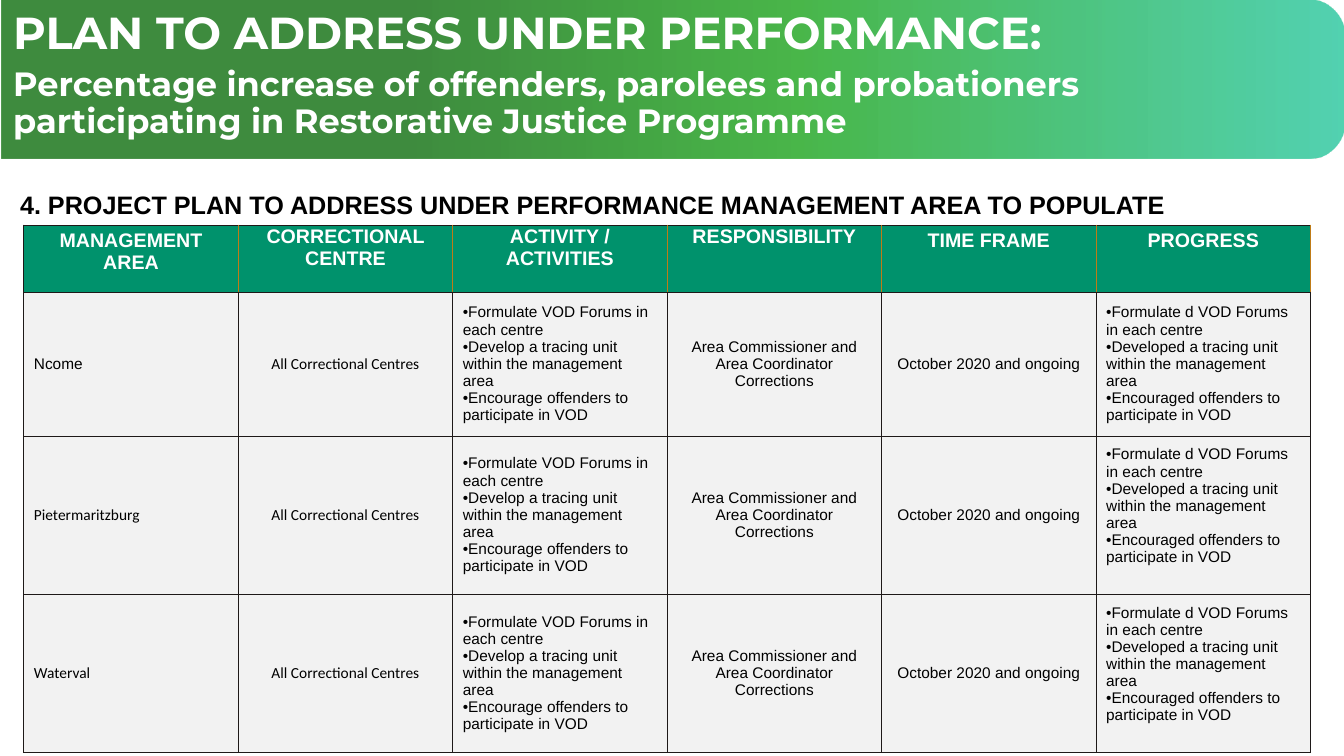
from lxml.etree import SubElement
from pptx import Presentation
from pptx.dml.color import RGBColor
from pptx.enum.shapes import MSO_SHAPE
from pptx.enum.text import MSO_ANCHOR, PP_ALIGN
from pptx.oxml.ns import qn
from pptx.util import Pt

WHITE = RGBColor(0xFF, 0xFF, 0xFF)
BLACK = RGBColor(0x00, 0x00, 0x00)
HEADER_GREEN = RGBColor(0x00, 0x92, 0x6C)
ROW_GREY = RGBColor(0xF2, 0xF2, 0xF2)
DARK_LINE = RGBColor(0x1E, 0x19, 0x18)
ORANGE_LINE = RGBColor(0xBF, 0x7B, 0x17)
DEEP_GREEN = RGBColor(0x00, 0x66, 0x00)
MID_GREEN = RGBColor(0x00, 0x99, 0x00)
TEAL = RGBColor(0x00, 0xBC, 0x8D)

BANNER_STOPS = [(30, DEEP_GREEN, 75), (59, MID_GREEN, 71), (100, TEAL, 67)]
TITLE_LINES = [
    ("PLAN TO ADDRESS UNDER PERFORMANCE:", 32),
    ("Percentage increase of offenders, parolees and probationers "
     "participating in Restorative Justice Programme", 24),
]
HEADING = "4. PROJECT PLAN TO ADDRESS UNDER PERFORMANCE MANAGEMENT AREA TO POPULATE"
HEADERS = ["MANAGEMENT AREA", "CORRECTIONAL CENTRE", "ACTIVITY / ACTIVITIES",
           "RESPONSIBILITY", "TIME FRAME", "PROGRESS"]
ACTIVITIES = ["Formulate VOD Forums in each centre",
              "Develop a tracing unit within the management area",
              "Encourage offenders to participate in VOD"]
PROGRESS = ["Formulate d VOD Forums in each centre",
            "Developed a tracing unit within the management area",
            "Encouraged offenders to participate in VOD"]
CENTRES = "All Correctional Centres"
RESPONSIBLE = "Area Commissioner and Area Coordinator Corrections"
TIME_FRAME = "October 2020 and ongoing"
AREAS = [("Ncome", "Arial", 102.8, 3.6),
         ("Pietermaritzburg", "Calibri", 113, 16.5),
         ("Waterval", "Calibri", 113, 16.5)]
COLUMN_WIDTH = 153.2
HEADER_HEIGHT = 47.9


class PlanSlide:
    """Holds the style and the current slide, and adds each kind of element."""

    title_font = "Montserrat"
    body_font = "Arial"
    header_size = 14
    cell_size = 11
    heading_size = 18

    def __init__(self, presentation):
        self.slide = presentation.slides.add_slide(presentation.slide_layouts[5])

    def add_run(self, paragraph, text, size, color, font=body_font, bold=False):
        run = paragraph.add_run()
        run.text = text
        run.font.name = font
        run.font.size = Pt(size)
        run.font.bold = bold
        run.font.color.rgb = color

    def set_title(self, lines, left, top, width, height):
        title = self.slide.shapes.title
        title.left, title.top = Pt(left), Pt(top)
        title.width, title.height = Pt(width), Pt(height)
        frame = title.text_frame
        frame.word_wrap = True
        frame.vertical_anchor = MSO_ANCHOR.TOP
        for index, (text, size) in enumerate(lines):
            paragraph = frame.add_paragraph() if index else frame.paragraphs[0]
            paragraph.alignment = PP_ALIGN.LEFT
            paragraph.line_spacing = 0.9
            paragraph.space_before = Pt(0)
            paragraph.space_after = Pt(6)
            self.add_run(paragraph, text, size, WHITE, self.title_font, True)

    def add_banner(self, stops, left, top, width, height):
        banner = self.slide.shapes.add_shape(
            MSO_SHAPE.ROUND_2_SAME_RECTANGLE,
            Pt(left + (width - height) / 2), Pt(top + (height - width) / 2),
            Pt(height), Pt(width))
        banner.rotation = 90
        banner.adjustments[0] = 0.23
        banner.adjustments[1] = 0
        banner.shadow.inherit = False
        banner.line.fill.background()
        banner.fill.gradient()
        banner.fill.gradient_angle = 90
        stop_list = banner.element.spPr.find(qn("a:gradFill")).find(qn("a:gsLst"))
        for stop in list(stop_list):
            stop_list.remove(stop)
        for position, color, opacity in stops:
            stop = SubElement(stop_list, qn("a:gs"), pos=str(position * 1000))
            fill = SubElement(stop, qn("a:srgbClr"), val=str(color))
            SubElement(fill, qn("a:alpha"), val=str(opacity * 1000))
        self.slide.shapes.title.element.addprevious(banner.element)

    def add_heading(self, text, left, top, width, height):
        box = self.slide.shapes.add_textbox(Pt(left), Pt(top), Pt(width), Pt(height))
        frame = box.text_frame
        frame.word_wrap = True
        frame.margin_left = 0
        self.add_run(frame.paragraphs[0], text, self.heading_size, BLACK, bold=True)

    def add_table(self, left, top, column_width, columns, heights):
        table = self.slide.shapes.add_table(
            len(heights), columns, Pt(left), Pt(top),
            Pt(column_width * columns), Pt(sum(heights))).table
        table.horz_banding = False
        for column in table.columns:
            column.width = Pt(column_width)
        for row, height in zip(table.rows, heights):
            row.height = Pt(height)
        return table

    def set_borders(self, cell, left, right):
        properties = cell._tc.get_or_add_tcPr()
        sides = [("a:lnL", left), ("a:lnR", right), ("a:lnT", DARK_LINE), ("a:lnB", DARK_LINE)]
        for index, (tag, color) in enumerate(sides):
            line = SubElement(properties, qn(tag), w=str(Pt(0.5)))
            fill = SubElement(line, qn("a:solidFill"))
            SubElement(fill, qn("a:srgbClr"), val=str(color))
            properties.insert(index, line)

    def fill_header(self, cell, text, tight, left, right):
        cell.fill.solid()
        cell.fill.fore_color.rgb = HEADER_GREEN
        cell.vertical_anchor = MSO_ANCHOR.TOP
        if tight:
            cell.margin_left = cell.margin_right = cell.margin_top = Pt(0.7)
            cell.margin_bottom = 0
        paragraph = cell.text_frame.paragraphs[0]
        paragraph.alignment = PP_ALIGN.CENTER
        self.add_run(paragraph, text, self.header_size, WHITE, bold=True)
        self.set_borders(cell, left, right)

    def fill_cell(self, cell, content, font=body_font, alignment=PP_ALIGN.CENTER, bottom=3.6):
        cell.fill.solid()
        cell.fill.fore_color.rgb = ROW_GREY
        cell.vertical_anchor = MSO_ANCHOR.MIDDLE
        cell.margin_bottom = Pt(bottom)
        bulleted = isinstance(content, list)
        frame = cell.text_frame
        for index, text in enumerate(content if bulleted else [content]):
            paragraph = frame.add_paragraph() if index else frame.paragraphs[0]
            paragraph.alignment = PP_ALIGN.LEFT if bulleted else alignment
            if bulleted:
                properties = paragraph._p.get_or_add_pPr()
                properties.set("marL", "0")
                properties.set("indent", "0")
                SubElement(properties, qn("a:buFont"), typeface="Arial")
                SubElement(properties, qn("a:buChar"), char="•")
            self.add_run(paragraph, text, self.cell_size, BLACK, font)
        self.set_borders(cell, DARK_LINE, DARK_LINE)


def main():
    presentation = Presentation()
    presentation.slide_width, presentation.slide_height = Pt(960), Pt(540)
    plan = PlanSlide(presentation)
    plan.set_title(TITLE_LINES, 2.2, 4.3, 862.6, 41)
    plan.add_banner(BANNER_STOPS, 1, 0, 959, 113.2)
    plan.add_heading(HEADING, 14.3, 131.8, 890, 28.8)

    heights = [HEADER_HEIGHT] + [height for _, _, height, _ in AREAS]
    table = plan.add_table(17, 160.7, COLUMN_WIDTH, len(HEADERS), heights)
    for column, text in enumerate(HEADERS):
        left = ORANGE_LINE if column else DARK_LINE
        plan.fill_header(table.cell(0, column), text, 1 <= column <= 3, left, ORANGE_LINE)
    for row, (area, font, _, progress_bottom) in enumerate(AREAS, 1):
        plan.fill_cell(table.cell(row, 0), area, font, PP_ALIGN.LEFT)
        plan.fill_cell(table.cell(row, 1), CENTRES, "Calibri")
        plan.fill_cell(table.cell(row, 2), ACTIVITIES)
        plan.fill_cell(table.cell(row, 3), RESPONSIBLE)
        plan.fill_cell(table.cell(row, 4), TIME_FRAME)
        plan.fill_cell(table.cell(row, 5), PROGRESS, bottom=progress_bottom)
    presentation.save("out.pptx")


if __name__ == "__main__":
    main()
